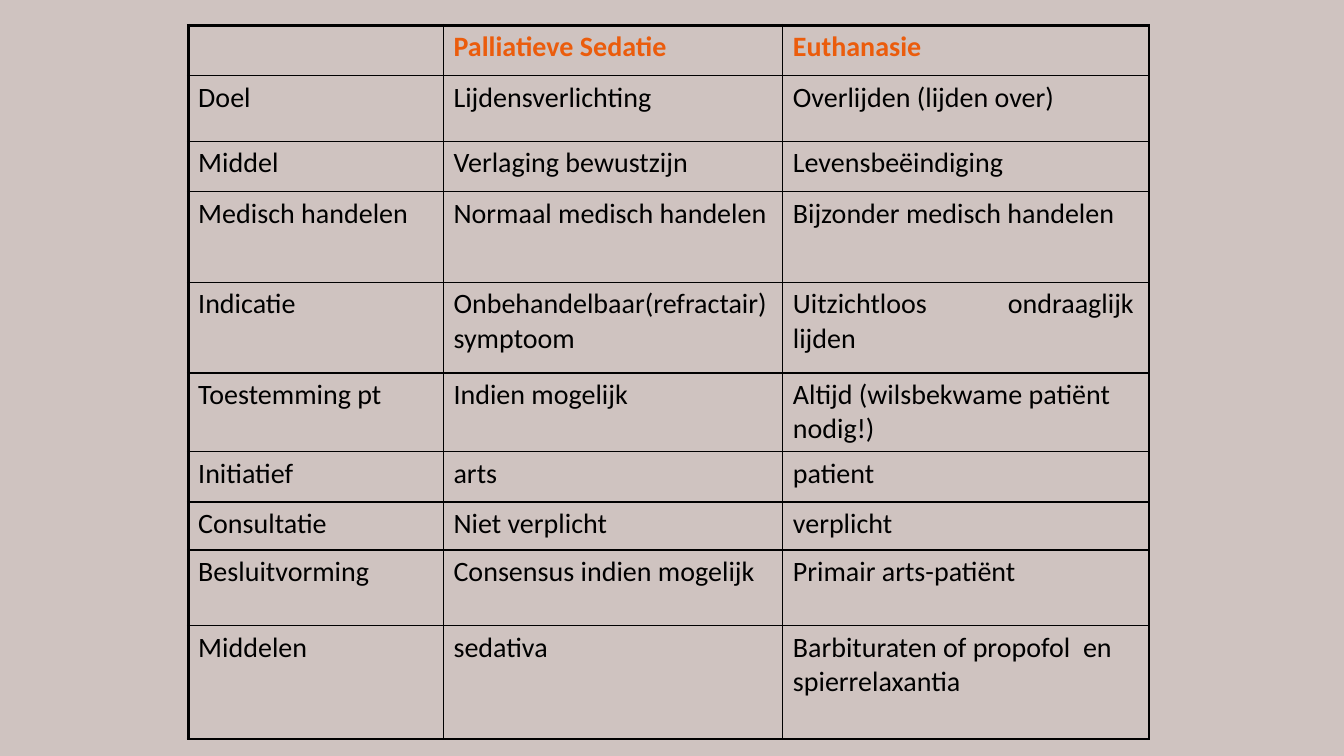
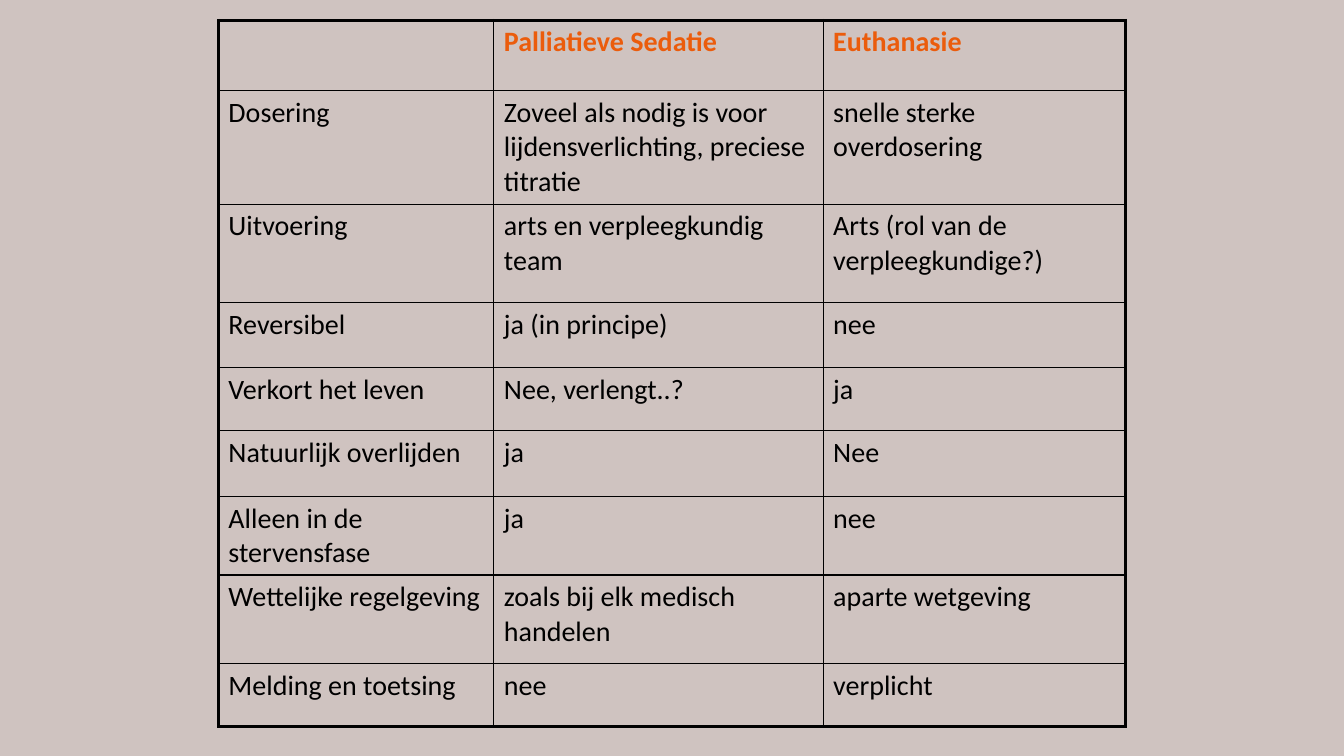
from dataclasses import dataclass

from lxml.etree import SubElement
from pptx import Presentation
from pptx.dml.color import RGBColor
from pptx.oxml import parse_xml
from pptx.oxml.ns import nsdecls, qn
from pptx.presentation import Presentation as Deck
from pptx.table import _Cell as Cell
from pptx.util import Inches, Pt

BACKGROUND = RGBColor(0xCF, 0xC3, 0xC0)
ORANGE = RGBColor(0xEB, 0x5C, 0x0C)
BLACK = RGBColor(0x00, 0x00, 0x00)

SLIDE_WIDTH = Inches(13.33)
SLIDE_HEIGHT = Inches(7.5)
GRID_COLUMN = SLIDE_WIDTH // 400
GRID_ROW = SLIDE_HEIGHT // 300

OUTER_LINE = Pt(2.25)
INNER_LINE = Pt(1)
TAB_STOP = 64 * GRID_COLUMN
SPACE_BEFORE = 20000

HEADER_FORMAT = {"name": "Calibri", "size": Pt(20), "bold": True}
BODY_FORMAT = {**HEADER_FORMAT, "bold": False}
HEADINGS = ("", "Palliatieve Sedatie", "Euthanasie")


@dataclass(frozen=True)
class Comparison:
    left: int
    top: int
    column_widths: tuple[int, ...]
    row_heights: tuple[int, ...]
    rows: tuple[tuple[str, str, str], ...]


COMPARISONS = (
    Comparison(
        left=56,
        top=10,
        column_widths=(76, 101, 109),
        row_heights=(20, 26, 20, 36, 36, 31, 20, 19, 30, 45),
        rows=(
            ("Doel", "Lijdensverlichting", "Overlijden (lijden over)"),
            ("Middel", "Verlaging bewustzijn", "Levensbeëindiging"),
            ("Medisch handelen", "Normaal medisch handelen", "Bijzonder medisch handelen"),
            ("Indicatie", "Onbehandelbaar(refractair) symptoom", "Uitzichtloos\tondraaglijk lijden"),
            ("Toestemming pt", "Indien mogelijk", "Altijd (wilsbekwame patiënt nodig!)"),
            ("Initiatief", "arts", "patient"),
            ("Consultatie", "Niet verplicht", "verplicht"),
            ("Besluitvorming", "Consensus indien mogelijk", "Primair arts-patiënt"),
            ("Middelen", "sedativa", "Barbituraten of propofol  en spierrelaxantia"),
        ),
    ),
    Comparison(
        left=65,
        top=8,
        column_widths=(82, 98, 90),
        row_heights=(28, 45, 39, 26, 25, 26, 31, 35, 25),
        rows=(
            (
                "Dosering",
                "Zoveel als nodig is voor lijdensverlichting, preciese titratie",
                "snelle sterke overdosering",
            ),
            ("Uitvoering", "arts en verpleegkundig team", "Arts (rol van de verpleegkundige?)"),
            ("Reversibel", "ja (in principe)", "nee"),
            ("Verkort het leven", "Nee, verlengt..?", "ja"),
            ("Natuurlijk overlijden", "ja", "Nee"),
            ("Alleen in de stervensfase", "ja", "nee"),
            ("Wettelijke regelgeving", "zoals bij elk medisch handelen", "aparte wetgeving"),
            ("Melding en toetsing", "nee", "verplicht"),
        ),
    ),
)


def set_borders(cell: Cell, outer_edges: dict[str, bool]) -> None:
    properties = cell._tc.get_or_add_tcPr()
    for position, (edge, is_outer) in enumerate(outer_edges.items()):
        width = OUTER_LINE if is_outer else INNER_LINE
        line = parse_xml(
            f'<a:{edge} {nsdecls("a")} w="{int(width)}"><a:solidFill>'
            f'<a:srgbClr val="{BLACK}"/></a:solidFill></a:{edge}>'
        )
        properties.insert(position, line)


def write_text(cell: Cell, text: str, is_header: bool) -> None:
    paragraph = cell.text_frame.paragraphs[0]
    properties = paragraph._p.get_or_add_pPr()
    spacing = SubElement(properties, qn("a:spcBef"))
    SubElement(spacing, qn("a:spcPct"), val=str(SPACE_BEFORE))
    if "\t" in text:
        tab_stops = SubElement(properties, qn("a:tabLst"))
        SubElement(tab_stops, qn("a:tab"), pos=str(TAB_STOP), algn="l")
    run = paragraph.add_run()
    run.text = text
    for attribute, value in (HEADER_FORMAT if is_header else BODY_FORMAT).items():
        setattr(run.font, attribute, value)
    run.font.color.rgb = ORANGE if is_header else BLACK


def add_comparison(presentation: Deck, comparison: Comparison) -> None:
    slide = presentation.slides.add_slide(presentation.slide_layouts[6])
    rows = (HEADINGS, *comparison.rows)
    last_row, last_column = len(rows) - 1, len(HEADINGS) - 1
    table = slide.shapes.add_table(
        len(rows),
        len(HEADINGS),
        comparison.left * GRID_COLUMN,
        comparison.top * GRID_ROW,
        sum(comparison.column_widths) * GRID_COLUMN,
        sum(comparison.row_heights) * GRID_ROW,
    ).table
    table.first_row = table.horz_banding = False
    for column, width in zip(table.columns, comparison.column_widths):
        column.width = width * GRID_COLUMN
    for row, height in zip(table.rows, comparison.row_heights):
        row.height = height * GRID_ROW
    for row_index, texts in enumerate(rows):
        for column_index, text in enumerate(texts):
            cell = table.cell(row_index, column_index)
            cell.fill.background()
            set_borders(cell, {
                "lnL": column_index == 0,
                "lnR": column_index == last_column,
                "lnT": row_index == 0,
                "lnB": row_index == last_row,
            })
            if text:
                write_text(cell, text, is_header=row_index == 0)


def main() -> None:
    presentation = Presentation()
    presentation.slide_width = SLIDE_WIDTH
    presentation.slide_height = SLIDE_HEIGHT
    fill = presentation.slide_master.background.fill
    fill.solid()
    fill.fore_color.rgb = BACKGROUND
    for comparison in COMPARISONS:
        add_comparison(presentation, comparison)
    presentation.save("out.pptx")


if __name__ == "__main__":
    main()
